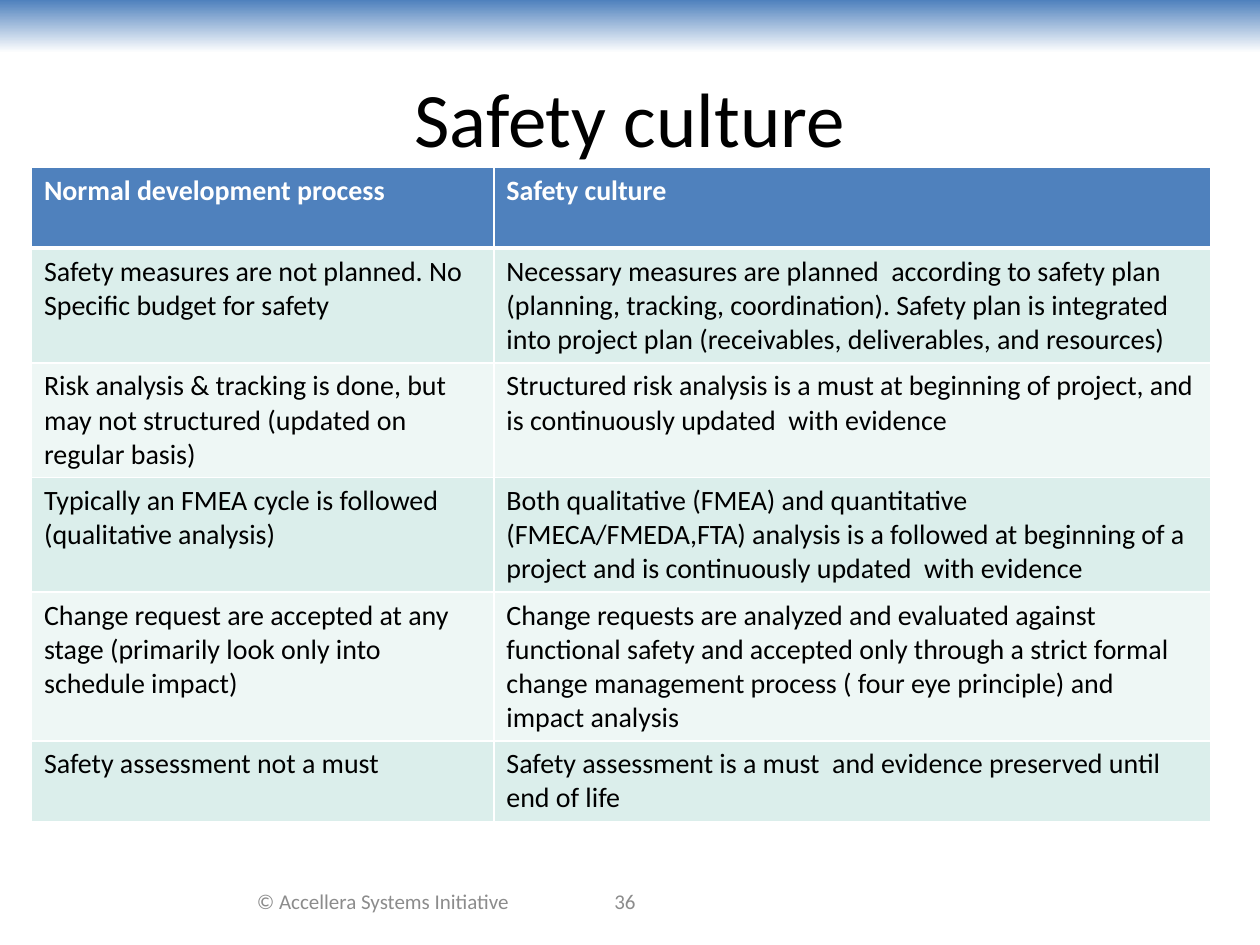
from lxml import etree
from pptx import Presentation
from pptx.dml.color import RGBColor
from pptx.enum import shapes, text
from pptx.oxml import ns
from pptx.util import Inches, Pt

TITLE = "Safety culture"
ROWS = [
    ("Normal development process", "Safety culture"),
    ("Safety measures are not planned. No Specific budget for safety",
     "Necessary measures are planned  according to safety plan (planning, tracking, "
     "coordination). Safety plan is integrated into project plan (receivables, "
     "deliverables, and resources)"),
    ("Risk analysis & tracking is done, but may not structured (updated on regular basis)",
     "Structured risk analysis is a must at beginning of project, and is continuously "
     "updated  with evidence"),
    ("Typically an FMEA cycle is followed (qualitative analysis)",
     "Both qualitative (FMEA) and quantitative (FMECA/FMEDA,FTA) analysis is a followed "
     "at beginning of a project and is continuously updated  with evidence"),
    ("Change request are accepted at any stage (primarily look only into schedule impact)",
     "Change requests are analyzed and evaluated against functional safety and accepted "
     "only through a strict formal change management process ( four eye principle) and "
     "impact analysis"),
    ("Safety assessment not a must",
     "Safety assessment is a must  and evidence preserved until end of life"),
]
COLUMN_WIDTHS = [3.67, 5.69]
ROW_HEIGHTS = [0.64, 0.91, 0.91, 0.91, 1.18, 0.64]
FOOTERS = [  # text, left, width
    ("© Accellera Systems Initiative", 1.83, 2.42),
    ("36", 4, 1.92),
]
BLUE, WHITE, BLACK, GREY = "4F81BD", "FFFFFF", "000000", "8C8C8C"
BANDS = ["EEF7F5", "DBEEEB"]


def rgb(value):
    return RGBColor.from_string(value)


def write(frame, words, size, color, bold=False, align=None):
    paragraph = frame.paragraphs[0]
    paragraph.alignment = align
    run = paragraph.add_run()
    run.text = words
    run.font.name = "Calibri"
    run.font.size = Pt(size)
    run.font.bold = bold
    run.font.color.rgb = rgb(color)


def set_borders(cell, widths):
    """Draw white cell borders; widths are points for left, right, top, bottom."""
    properties = cell._tc.get_or_add_tcPr()
    for index, (side, width) in enumerate(zip("LRTB", widths)):
        line = etree.Element(ns.qn(f"a:ln{side}"), w=str(Pt(width)))
        fill = etree.SubElement(line, ns.qn("a:solidFill"))
        etree.SubElement(fill, ns.qn("a:srgbClr"), val=WHITE)
        properties.insert(index, line)


def add_band(slide):
    band = slide.shapes.add_shape(shapes.MSO_SHAPE.RECTANGLE, 0, 0, Inches(10), Inches(0.42))
    band.shadow.inherit = False
    band.line.fill.background()
    band.fill.gradient()
    band.fill.gradient_angle = 270
    for stop, color, position in zip(band.fill.gradient_stops, (BLUE, WHITE), (0, 1)):
        stop.color.rgb = rgb(color)
        stop.position = position


def add_title(slide):
    title = slide.shapes.title
    title.left, title.top = Inches(0.5), Inches(0.3)
    title.width, title.height = Inches(9), Inches(1.25)
    title.text_frame.vertical_anchor = text.MSO_ANCHOR.MIDDLE
    write(title.text_frame, TITLE, 44, BLACK, align=text.PP_ALIGN.CENTER)


def add_footer(slide, words, left, width):
    box = slide.shapes.add_textbox(Inches(left), Inches(6.95), Inches(width), Inches(0.4))
    box.text_frame.word_wrap = True
    box.text_frame.vertical_anchor = text.MSO_ANCHOR.MIDDLE
    write(box.text_frame, words, 12, GREY, align=text.PP_ALIGN.CENTER)


def add_comparison(slide):
    table = slide.shapes.add_table(
        len(ROWS), len(COLUMN_WIDTHS), Inches(0.25), Inches(1.33),
        Inches(sum(COLUMN_WIDTHS)), Inches(sum(ROW_HEIGHTS))).table
    for column, width in zip(table.columns, COLUMN_WIDTHS):
        column.width = Inches(width)
    for r, (row, height) in enumerate(zip(ROWS, ROW_HEIGHTS)):
        table.rows[r].height = Inches(height)
        header = r == 0
        for c, words in enumerate(row):
            cell = table.cell(r, c)
            cell.fill.solid()
            cell.fill.fore_color.rgb = rgb(BLUE if header else BANDS[r % 2])
            set_borders(cell, (1, 1, 3 if r == 1 else 1, 3 if header else 1))
            write(cell.text_frame, words, 16, WHITE if header else BLACK, bold=header)


def main():
    presentation = Presentation()
    presentation.slide_width, presentation.slide_height = Inches(10), Inches(7.5)
    slide = presentation.slides.add_slide(presentation.slide_layouts[5])
    add_band(slide)
    add_title(slide)
    for footer in FOOTERS:
        add_footer(slide, *footer)
    add_comparison(slide)
    presentation.save("out.pptx")


if __name__ == "__main__":
    main()
